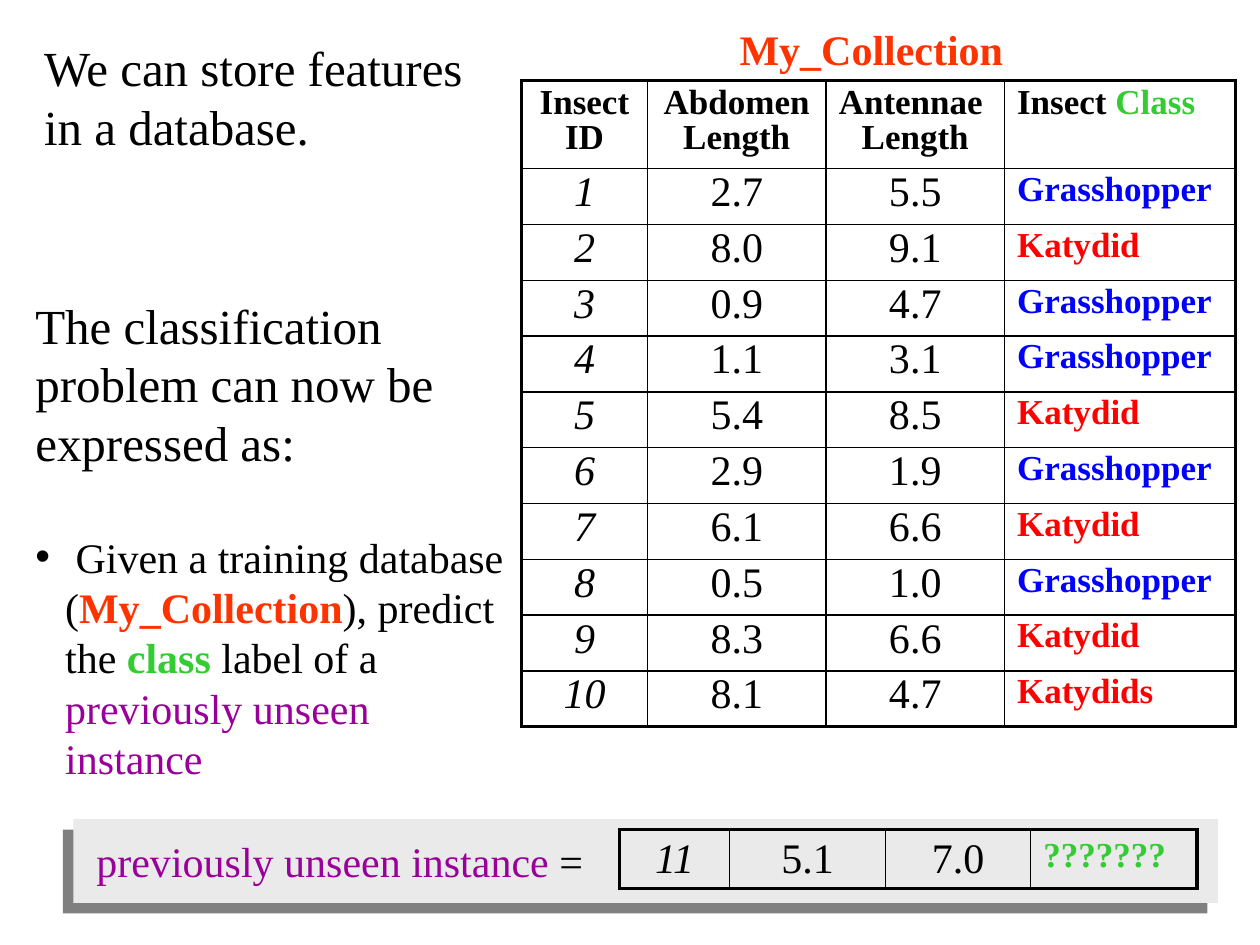
from lxml import etree
from pptx import Presentation
from pptx.dml.color import RGBColor
from pptx.enum.shapes import MSO_SHAPE
from pptx.enum.text import MSO_ANCHOR, MSO_AUTO_SIZE, PP_ALIGN
from pptx.oxml import parse_xml
from pptx.oxml.ns import nsdecls, qn
from pptx.util import Pt

LEFT, CENTER = PP_ALIGN.LEFT, PP_ALIGN.CENTER
TOP = MSO_ANCHOR.TOP
NO_FIT, GROW = MSO_AUTO_SIZE.NONE, MSO_AUTO_SIZE.SHAPE_TO_FIT_TEXT
RECTANGLE = MSO_SHAPE.RECTANGLE

FONT = "Times New Roman"
BLACK, ORANGE, GREEN, PURPLE = "000000", "FF3300", "33CC33", "990099"
BLUE, RED = "0000FF", "FF0000"
THIN, THICK = 1, 2.25


def write(paragraph, size, *runs, align=LEFT, spacing=None):
    """Fill a paragraph with (text, colour, style) runs; style may hold b and i."""
    paragraph.alignment = align
    if spacing:
        paragraph.line_spacing = spacing
    for text, color, style in runs:
        run = paragraph.add_run()
        run.text = text
        run.font.name = FONT
        run.font.size = Pt(size)
        run.font.bold = "b" in style
        run.font.italic = "i" in style
        run.font.color.rgb = RGBColor.from_string(color)


def add_grid(shapes, left, top, widths, heights):
    """Add an unfilled table with thin inner and thick outer borders."""
    table = shapes.add_table(len(heights), len(widths), Pt(left), Pt(top),
                             Pt(sum(widths)), Pt(sum(heights))).table
    table.first_row = table.horz_banding = False
    for column, width in zip(table.columns, widths):
        column.width = Pt(width)
    for row, height in zip(table.rows, heights):
        row.height = Pt(height)
    for r in range(len(heights)):
        for c in range(len(widths)):
            cell = table.cell(r, c)
            properties = cell._tc.get_or_add_tcPr()
            edges = {"lnL": c == 0, "lnR": c == len(widths) - 1,
                     "lnT": r == 0, "lnB": r == len(heights) - 1}
            for tag, outer in edges.items():
                line = etree.SubElement(properties, qn("a:" + tag))
                line.set("w", str(Pt(THICK if outer else THIN)))
                fill = etree.SubElement(line, qn("a:solidFill"))
                etree.SubElement(fill, qn("a:srgbClr")).set("val", BLACK)
            cell.fill.background()
    return table


presentation = Presentation()
presentation.slide_width, presentation.slide_height = Pt(720), Pt(540)
slide = presentation.slides.add_slide(presentation.slide_layouts[1])
shapes = slide.shapes

# Title and body text
title, body = slide.placeholders
for shape, box in ((title, (18, 18, 276, 74)), (body, (13, 165, 282, 290))):
    shape.left, shape.top, shape.width, shape.height = map(Pt, box)
    shape.text_frame.word_wrap = True
    shape.text_frame.auto_size = NO_FIT
    shape.text_frame.vertical_anchor = TOP
write(title.text_frame.paragraphs[0], 28,
      ("We can store features in a database.", BLACK, ""))

statement = body.text_frame.paragraphs[0]
write(statement, 28,
      ("The classification problem can now be expressed as:", BLACK, ""))
task = body.text_frame.add_paragraph()
write(task, 24,
      (" Given a training database (", BLACK, ""),
      ("My_Collection", ORANGE, "b"),
      ("), predict the ", BLACK, ""),
      ("class ", GREEN, "b"),
      ("label of a ", BLACK, ""),
      ("previously unseen instance", PURPLE, ""))
for paragraph, indent, space in ((statement, 0, 0), (task, 17, 34)):
    paragraph.space_before = Pt(space)
    properties = paragraph._p.get_or_add_pPr()
    properties.set("marL", str(Pt(indent)))
    properties.set("indent", str(-Pt(indent)))
etree.SubElement(statement._p.get_or_add_pPr(), qn("a:buNone"))

# Shadowed panel for the unseen instance
panel = shapes.add_shape(RECTANGLE, Pt(42), Pt(468), Pt(654), Pt(48))
panel.fill.solid()
panel.fill.fore_color.rgb = RGBColor.from_string("EAEAEA")
panel.line.fill.background()
panel.shadow.inherit = False
effects = panel._element.spPr.find(qn("a:effectLst"))
effects.append(parse_xml(
    f'<a:outerShdw {nsdecls("a")} dist="{Pt(8.5)}" dir="8100000" algn="ctr" '
    'rotWithShape="0"><a:srgbClr val="808080"/></a:outerShdw>'))

# Collection table
insects = [
    ("2.7", "5.5", "Grasshopper"), ("8.0", "9.1", "Katydid"),
    ("0.9", "4.7", "Grasshopper"), ("1.1", "3.1", "Grasshopper"),
    ("5.4", "8.5", "Katydid"), ("2.9", "1.9", "Grasshopper"),
    ("6.1", "6.6", "Katydid"), ("0.5", "1.0", "Grasshopper"),
    ("8.3", "6.6", "Katydid"), ("8.1", "4.7", "Katydids"),
]
collection = add_grid(shapes, 298, 46, [72, 102, 102, 132],
                      [50.4] + [31.9] * len(insects))
for c, lines in enumerate((["Insect ID"], ["Abdomen ", "Length"],
                           ["Antennae ", "Length"])):
    frame = collection.cell(0, c).text_frame
    for i, line in enumerate(lines):
        paragraph = frame.add_paragraph() if i else frame.paragraphs[0]
        write(paragraph, 20, (line, BLACK, "b"), align=CENTER, spacing=0.9)
write(collection.cell(0, 3).text_frame.paragraphs[0], 20,
      ("Insect ", BLACK, "b"), ("Class", GREEN, "b"), spacing=0.9)

# Unseen instance table
unseen = add_grid(shapes, 354, 474, [63, 89, 83, 95], [33])

# Data rows of both tables
records = [(collection, i, str(i), *insect, 0.85)
           for i, insect in enumerate(insects, 1)]
records.append((unseen, 0, "11", "5.1", "7.0", "???????", None))
for table, r, number, abdomen, antennae, label, spacing in records:
    for c, (text, style) in enumerate(((number, "i"), (abdomen, ""), (antennae, ""))):
        write(table.cell(r, c).text_frame.paragraphs[0], 24,
              (text, BLACK, style), align=CENTER, spacing=spacing)
    color = {"G": BLUE, "K": RED}.get(label[0], GREEN)
    write(table.cell(r, 3).text_frame.paragraphs[0], 20,
          (label, color, "b"), spacing=spacing)

# Table captions
captions = [
    ((415.5, 10, 165, 36), [("My_Collection", ORANGE, "b")]),
    ((48, 474, 298, 36), [("previously unseen instance", PURPLE, ""),
                          (" =", BLACK, "")]),
]
for box, runs in captions:
    frame = shapes.add_textbox(*map(Pt, box)).text_frame
    frame.word_wrap = False
    frame.auto_size = GROW
    write(frame.paragraphs[0], 24, *runs)

presentation.save("out.pptx")
